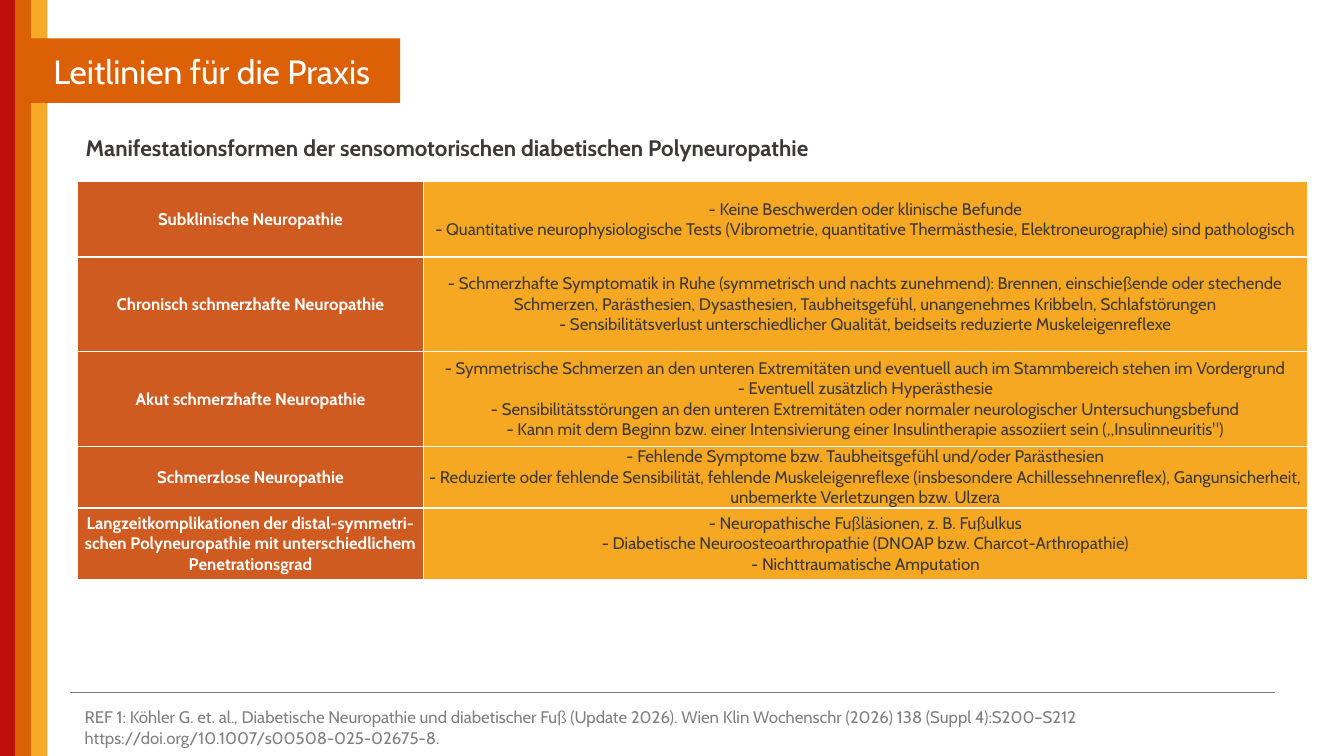
from lxml import etree
from pptx import Presentation
from pptx import util as u
from pptx.dml.color import RGBColor
from pptx.enum import shapes, text
from pptx.oxml import ns

SCALE = 9144
FONT = "Cabin"
WHITE = RGBColor(0xFF, 0xFF, 0xFF)
RED = RGBColor(0xC0, 0x0E, 0x0D)
ORANGE = RGBColor(0xDB, 0x60, 0x06)
AMBER = RGBColor(0xF7, 0xA8, 0x24)
RUST = RGBColor(0xCF, 0x5B, 0x21)
GOLD = RGBColor(0xF7, 0xA8, 0x23)
DARK = RGBColor(0x3E, 0x38, 0x37)
GREY = RGBColor(0x80, 0x80, 0x80)

FORMS = [
    (75, "Subklinische Neuropathie", [
        "- Keine Beschwerden oder klinische Befunde",
        "- Quantitative neurophysiologische Tests (Vibrometrie, quantitative Thermästhesie, "
        "Elektroneurographie) sind pathologisch"]),
    (94, "Chronisch schmerzhafte Neuropathie", [
        "- Schmerzhafte Symptomatik in Ruhe (symmetrisch und nachts zunehmend): Brennen, "
        "einschießende oder stechende Schmerzen, Parästhesien, Dysasthesien, Taubheitsgefühl, "
        "unangenehmes Kribbeln, Schlafstörungen",
        "- Sensibilitätsverlust unterschiedlicher Qualität, beidseits reduzierte "
        "Muskeleigenreflexe"]),
    (94, "Akut schmerzhafte Neuropathie", [
        "- Symmetrische Schmerzen an den unteren Extremitäten und eventuell auch im "
        "Stammbereich stehen im Vordergrund",
        "- Eventuell zusätzlich Hyperästhesie",
        "- Sensibilitätsstörungen an den unteren Extremitäten oder normaler neurologischer "
        "Untersuchungsbefund",
        "- Kann mit dem Beginn bzw. einer Intensivierung einer Insulintherapie assoziiert "
        "sein („Insulinneuritis\")"]),
    (51, "Schmerzlose Neuropathie", [
        "- Fehlende Symptome bzw. Taubheitsgefühl und/oder Parästhesien",
        "- Reduzierte oder fehlende Sensibilität, fehlende Muskeleigenreflexe (insbesondere "
        "Achillessehnenreflex), Gangunsicherheit, unbemerkte Verletzungen bzw. Ulzera"]),
    (71, "Langzeitkomplikationen der distal-symmetri-schen Polyneuropathie mit "
         "unterschiedlichem Penetrationsgrad", [
        "- Neuropathische Fußläsionen, z. B. Fußulkus",
        "- Diabetische Neuroosteoarthropathie (DNOAP bzw. Charcot-Arthropathie)",
        "- Nichttraumatische Amputation"]),
]
SOURCE = [
    "REF 1: Köhler G. et. al., Diabetische Neuropathie und diabetischer Fuß (Update 2026). "
    "Wien Klin Wochenschr (2026) 138 (Suppl 4):S200–S212",
    "https://doi.org/10.1007/s00508-025-02675-8.",
]


def px(n):
    return u.Emu(n * SCALE)


def place(shape, x, y, w, h):
    shape.left, shape.top, shape.width, shape.height = map(px, (x, y, w, h))


def write(frame, lines, size, color, bold=False, align=text.PP_ALIGN.LEFT):
    for i, line in enumerate(lines):
        para = frame.paragraphs[0] if i == 0 else frame.add_paragraph()
        para.alignment = align
        para.space_before = u.Pt(0)
        run = para.add_run()
        run.text = line
        run.font.name = FONT
        run.font.size = u.Pt(size)
        run.font.bold = bold
        run.font.color.rgb = color


def stripe(slide, depth, x, color):
    bar = slide.shapes.add_shape(shapes.MSO_SHAPE.RECTANGLE, px(x), 0, px(16), px(750))
    bar.shadow.inherit = False
    bar.fill.solid()
    bar.fill.fore_color.rgb = color
    bar.line.fill.background()
    slide.shapes._spTree.insert(2 + depth, bar._element)


def title(slide, words):
    box = slide.shapes.title
    place(box, 23, 38, 374, 64)
    box.fill.solid()
    box.fill.fore_color.rgb = ORANGE
    frame = box.text_frame
    frame.auto_size = text.MSO_AUTO_SIZE.NONE
    frame.vertical_anchor = text.MSO_ANCHOR.MIDDLE
    write(frame, [words], 24, WHITE, align=text.PP_ALIGN.CENTER)


def heading(slide, words):
    box = slide.placeholders[1]
    place(box, 75, 131, 1221, 48)
    frame = box.text_frame
    frame.auto_size = text.MSO_AUTO_SIZE.NONE
    para = frame.paragraphs[0]
    props = para._p.get_or_add_pPr()
    props.set("marL", "0")
    props.set("indent", "0")
    etree.SubElement(props, ns.qn("a:buNone"))
    para.line_spacing = 0.9
    write(frame, [words], 16, DARK, True)


def border(cell, side, color, width=1):
    props = cell._tc.get_or_add_tcPr()
    line = etree.SubElement(props, ns.qn("a:ln" + side), w=str(u.Pt(width)))
    fill = etree.SubElement(line, ns.qn("a:solidFill"))
    etree.SubElement(fill, ns.qn("a:srgbClr"), val=str(color))


def pad(cell, gap):
    cell.margin_left = cell.margin_right = px(gap)
    cell.margin_top = cell.margin_bottom = px(gap)


def grid(slide, x, y, cols, rows):
    frame = slide.shapes.add_table(
        len(rows), len(cols), px(x), px(y), px(sum(cols)), px(sum(rows)))
    table = frame.table
    table.first_row = table.horz_banding = False
    for col, wide in zip(table.columns, cols):
        col.width = px(wide)
    for row, high in zip(table.rows, rows):
        row.height = px(high)
    return table


def form(cell, lines, back, color, bold):
    pad(cell, 0)
    cell.vertical_anchor = text.MSO_ANCHOR.MIDDLE
    for side in "LRTB":
        border(cell, side, WHITE)
    cell.fill.solid()
    cell.fill.fore_color.rgb = back
    write(cell.text_frame, lines, 12, color, bold, text.PP_ALIGN.CENTER)


def forms(slide):
    table = grid(slide, 77, 180, [343, 877], [high for high, _, _ in FORMS])
    for i, (_, name, signs) in enumerate(FORMS):
        form(table.cell(i, 0), [name], RUST, WHITE, True)
        form(table.cell(i, 1), signs, GOLD, DARK, False)


def source(slide):
    cell = grid(slide, 69, 687, [1196], [35]).cell(0, 0)
    pad(cell, 15)
    border(cell, "L", WHITE)
    border(cell, "R", WHITE)
    border(cell, "T", GREY)
    border(cell, "B", WHITE, 3)
    cell.fill.background()
    write(cell.text_frame, SOURCE, 12, GREY)


def main():
    deck = Presentation()
    deck.slide_width, deck.slide_height = u.Inches(13.33), u.Inches(7.5)
    slide = deck.slides.add_slide(deck.slide_layouts[1])
    for i, (x, color) in enumerate([(0, RED), (15, ORANGE), (31, AMBER)]):
        stripe(slide, i, x, color)
    title(slide, "Leitlinien für die Praxis")
    forms(slide)
    heading(slide, "Manifestationsformen der sensomotorischen diabetischen Polyneuropathie")
    source(slide)
    deck.save("out.pptx")


if __name__ == "__main__":
    main()
